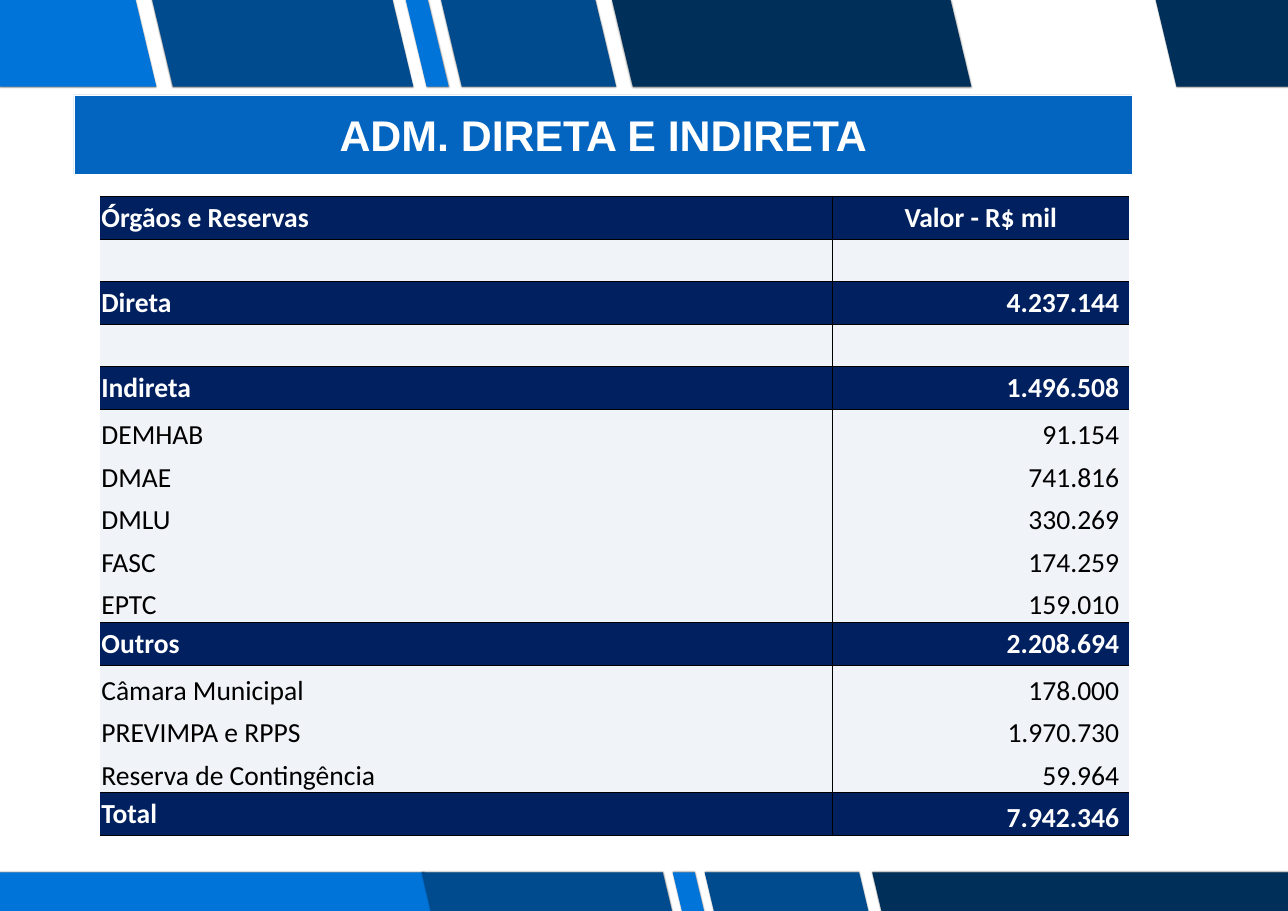
from dataclasses import dataclass

from lxml.etree import SubElement
from pptx import Presentation
from pptx.dml.color import RGBColor
from pptx.enum.shapes import MSO_SHAPE
from pptx.enum.text import MSO_ANCHOR, PP_ALIGN
from pptx.oxml.ns import qn
from pptx.slide import Slide
from pptx.table import _Cell
from pptx.text.text import TextFrame
from pptx.util import Inches, Pt

COLORS = {
    "bright": "0074D9", "mid": "004B8D", "deep": "00305A", "title": "0365C0",
    "navy": "002060", "pale": "F0F3F8", "white": "FFFFFF", "black": "000000",
}
WIDTH, HEIGHT = Inches(11.68), Inches(8.26)
LEAN = 0.24  # sideways run of a slanted edge per unit of height


@dataclass(frozen=True)
class Band:
    left: float  # percent of the slide width, along the top edge
    right: float
    color: str


@dataclass(frozen=True)
class Row:
    label: str = ""
    value: str = ""
    dark: bool = False
    align: PP_ALIGN = PP_ALIGN.RIGHT
    value_anchor: MSO_ANCHOR | None = None


TOP_BANDS = [
    Band(0, 10.53, "bright"), Band(11.82, 30.48, "mid"), Band(31.51, 33.22, "bright"),
    Band(34.25, 46.23, "mid"), Band(47.52, 73.8, "deep"), Band(89.73, 100, "deep"),
]
BOTTOM_BANDS = [
    Band(0, 32.88, "bright"), Band(32.79, 51.46, "mid"), Band(52.23, 53.94, "bright"),
    Band(54.71, 66.7, "mid"), Band(67.72, 100, "deep"),
]
ROWS = [
    Row("Órgãos e Reservas", "Valor - R$ mil", True, PP_ALIGN.CENTER),
    Row(),
    Row("Direta", "4.237.144", True),
    Row(),
    Row("Indireta", "1.496.508", True),
    Row("DEMHAB", "91.154"),
    Row("DMAE", "741.816"),
    Row("DMLU", "330.269"),
    Row("FASC", "174.259"),
    Row("EPTC", "159.010"),
    Row("Outros", "2.208.694", True),
    Row("Câmara Municipal", "178.000"),
    Row("PREVIMPA e RPPS", "1.970.730"),
    Row("Reserva de Contingência", "59.964"),
    Row("Total", "7.942.346", True, value_anchor=MSO_ANCHOR.BOTTOM),
]
COLUMN_SHARES = (56.85, 23.03)
ROW_SHARE = 4.68


def color(name: str) -> RGBColor:
    return RGBColor.from_string(COLORS[name])


def across(share: float) -> int:
    """Percent of the slide width as a length."""
    return round(WIDTH * share / 100)


def down(share: float) -> int:
    """Percent of the slide height as a length."""
    return round(HEIGHT * share / 100)


def write(tf: TextFrame, text: str, align: PP_ALIGN, ink: str, **font: object) -> None:
    p = tf.paragraphs[0]
    p.alignment = align
    target = p.font
    if text:
        r = p.add_run()
        r.text = text
        target = r.font
    for name, value in font.items():
        setattr(target, name, value)
    target.color.rgb = color(ink)


def draw_bands(s: Slide, bands: list[Band], top: float, bottom: float) -> None:
    """Draw leaning bands, upright where they meet a side of the slide."""
    y1, y2 = down(top), down(bottom)
    shift = round((y2 - y1) * LEAN)
    for band in bands:
        x1, x2 = across(band.left), across(band.right)
        low_left = x1 + (shift if band.left > 0 else 0)
        low_right = x2 + (shift if band.right < 100 else 0)
        builder = s.shapes.build_freeform(x1, y1)
        builder.add_line_segments([(x2, y1), (low_right, y2), (low_left, y2)])
        sp = builder.convert_to_shape()
        sp.fill.solid()
        sp.fill.fore_color.rgb = color(band.color)
        sp.line.fill.background()
        add_shadow(sp)


def add_shadow(sp) -> None:
    sp.shadow.inherit = False
    effects = sp._element.spPr.find(qn("a:effectLst"))
    shadow = SubElement(effects, qn("a:outerShdw"), blurRad=str(Pt(1)), dist="0", dir="5400000")
    ink = SubElement(shadow, qn("a:srgbClr"), val=COLORS["black"])
    SubElement(ink, qn("a:alpha"), val="50000")


def draw_title(s: Slide, text: str) -> None:
    sp = s.shapes.add_shape(MSO_SHAPE.RECTANGLE, across(5.74), down(10.41),
                            across(82.19), down(8.72))
    sp.shadow.inherit = False
    sp.fill.solid()
    sp.fill.fore_color.rgb = color("title")
    sp.line.color.rgb = color("white")
    sp.line.width = Pt(0.25)
    sp.text_frame.vertical_anchor = MSO_ANCHOR.MIDDLE
    write(sp.text_frame, text, PP_ALIGN.CENTER, "white", name="Arial", size=Pt(28), bold=True)


def set_borders(cell: _Cell, visible: dict[str, bool]) -> None:
    tc_pr = cell._tc.get_or_add_tcPr()
    for side in "LRTB":
        ln = SubElement(tc_pr, qn(f"a:ln{side}"), w=str(Pt(0.5)))
        if visible[side]:
            SubElement(SubElement(ln, qn("a:solidFill")), qn("a:srgbClr"), val=COLORS["black"])
        else:
            SubElement(ln, qn("a:noFill"))


def draw_table(s: Slide, rows: list[Row]) -> None:
    table = s.shapes.add_table(len(rows), len(COLUMN_SHARES), across(7.79), down(21.55),
                               across(sum(COLUMN_SHARES)), down(ROW_SHARE * len(rows))).table
    table.first_row = table.horz_banding = False
    for column, share in zip(table.columns, COLUMN_SHARES):
        column.width = across(share)
    for i, row in enumerate(rows):
        table.rows[i].height = down(ROW_SHARE)
        anchor = MSO_ANCHOR.MIDDLE if row.dark else MSO_ANCHOR.BOTTOM
        above = row.dark or (i > 0 and rows[i - 1].dark)
        below = row.dark or (i + 1 < len(rows) and rows[i + 1].dark)
        contents = [(row.label, PP_ALIGN.LEFT, anchor),
                    (row.value, row.align, row.value_anchor or anchor)]
        for j, (text, align, cell_anchor) in enumerate(contents):
            cell = table.cell(i, j)
            layout = {
                "margin_left": Pt(0.7), "margin_top": Pt(0.7), "margin_bottom": 0,
                "margin_right": Pt(6.5) if align == PP_ALIGN.RIGHT else Pt(0.7),
                "vertical_anchor": cell_anchor,
            }
            for name, value in layout.items():
                setattr(cell, name, value)
            set_borders(cell, {"L": j == 1, "R": j == 0, "T": above, "B": below})
            cell.fill.solid()
            cell.fill.fore_color.rgb = color("navy" if row.dark else "pale")
            write(cell.text_frame, text, align, "white" if row.dark else "black",
                  name="Calibri", size=Pt(18), bold=row.dark)


def main() -> None:
    prs = Presentation()
    prs.slide_width, prs.slide_height = WIDTH, HEIGHT
    s = prs.slides.add_slide(prs.slide_layouts[6])
    draw_bands(s, TOP_BANDS, 0, 9.5)
    draw_bands(s, BOTTOM_BANDS, 95.76, 100)
    draw_title(s, "ADM. DIRETA E INDIRETA")
    draw_table(s, ROWS)
    prs.save("out.pptx")


if __name__ == "__main__":
    main()
